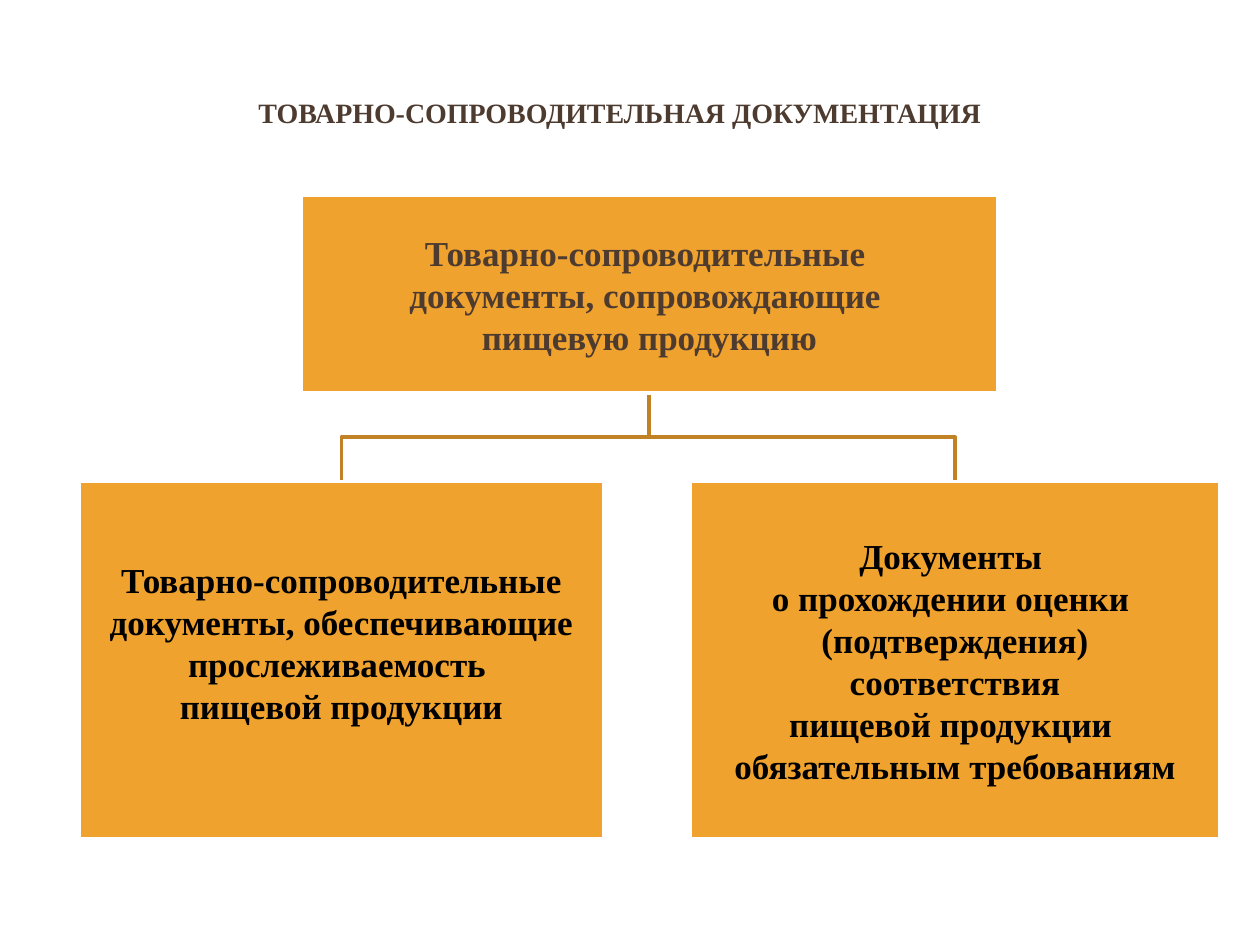
from pptx import Presentation
from pptx import util as u
from pptx.dml.color import RGBColor
from pptx.enum import shapes, text

PX = 9144  # EMU per px, 100 px to the inch
FONT = "Times New Roman"
COLORS = {"brown": "4E3B30", "black": "000000", "orange": "F0A22E",
          "line": "C08225", "white": "FFFFFF"}

TITLE = "ТОВАРНО-СОПРОВОДИТЕЛЬНАЯ ДОКУМЕНТАЦИЯ"
ROOT = ["Товарно-сопроводительные ",
        "документы, сопровождающие ",
        "пищевую продукцию"]
TRACING = ["Товарно-сопроводительные",
           " документы, обеспечивающие ",
           "прослеживаемость ",
           "пищевой продукции"]
CONFORMITY = ["Документы ",
              "о прохождении оценки ",
              "(подтверждения)",
              " соответствия ",
              "пищевой продукции ",
              "обязательным требованиям"]


def color(name):
    return RGBColor.from_string(COLORS[name])


def write(shape, lines, size, ink, inset, bottom=None):
    """Centre bold lines in a shape, one paragraph each."""
    frame = shape.text_frame
    frame.word_wrap = True
    frame.vertical_anchor = text.MSO_ANCHOR.MIDDLE
    frame.margin_left = frame.margin_right = frame.margin_top = inset * PX
    frame.margin_bottom = (inset if bottom is None else bottom) * PX
    frame.text = "\n".join(lines)
    for para in frame.paragraphs:
        para.alignment = text.PP_ALIGN.CENTER
        for span in para.runs:
            span.font.name = FONT
            span.font.size = u.Pt(size)
            span.font.bold = True
            span.font.color.rgb = color(ink)


def add_title(page, box):
    title = page.shapes.add_textbox(*(n * PX for n in box))
    write(title, [TITLE], 16, "brown", 5)


def add_node(page, box, lines, ink, bottom=None):
    node = page.shapes.add_shape(shapes.MSO_SHAPE.RECTANGLE,
                                 *(n * PX for n in box))
    node.shadow.inherit = False
    node.fill.solid()
    node.fill.fore_color.rgb = color("orange")
    node.line.color.rgb = color("white")
    node.line.width = u.Pt(2)
    write(node, lines, 20, ink, 1, bottom)


def add_branch(page, parent, child):
    """Draw an elbow from the parent's bottom centre to the child's top."""
    start_x, start_y = parent[0] + parent[2] // 2, parent[1] + parent[3]
    end_x, end_y = child[0] + child[2] // 2, child[1]
    middle = (start_y + end_y) // 2
    builder = page.shapes.build_freeform(start_x, start_y, scale=PX)
    builder.add_line_segments(
        [(start_x, middle), (end_x, middle), (end_x, end_y)], close=False)
    branch = builder.convert_to_shape()
    branch.shadow.inherit = False
    branch.fill.background()
    branch.line.color.rgb = color("line")
    branch.line.width = u.Pt(2)


def add_tree(page, box):
    """Place one root above two children, relative to the box."""
    left, top, width, height = box
    root = (left + 176, top, 553, 157)
    child_top, child_height = top + 227, height - 227
    tracing = (left, child_top, 416, child_height)
    conformity = (left + width - 420, child_top, 420, child_height)

    # Branches lie behind the nodes
    for child in (conformity, tracing):
        add_branch(page, root, child)

    add_node(page, root, ROOT, "brown")
    add_node(page, tracing, TRACING, "black", bottom=29)
    add_node(page, conformity, CONFORMITY, "black")


def main():
    deck = Presentation()
    deck.slide_width, deck.slide_height = 1000 * PX, 750 * PX
    page = deck.slides.add_slide(deck.slide_layouts[6])
    add_title(page, (70, 31, 844, 117))
    add_tree(page, (63, 155, 905, 511))
    deck.save("out.pptx")


if __name__ == "__main__":
    main()
